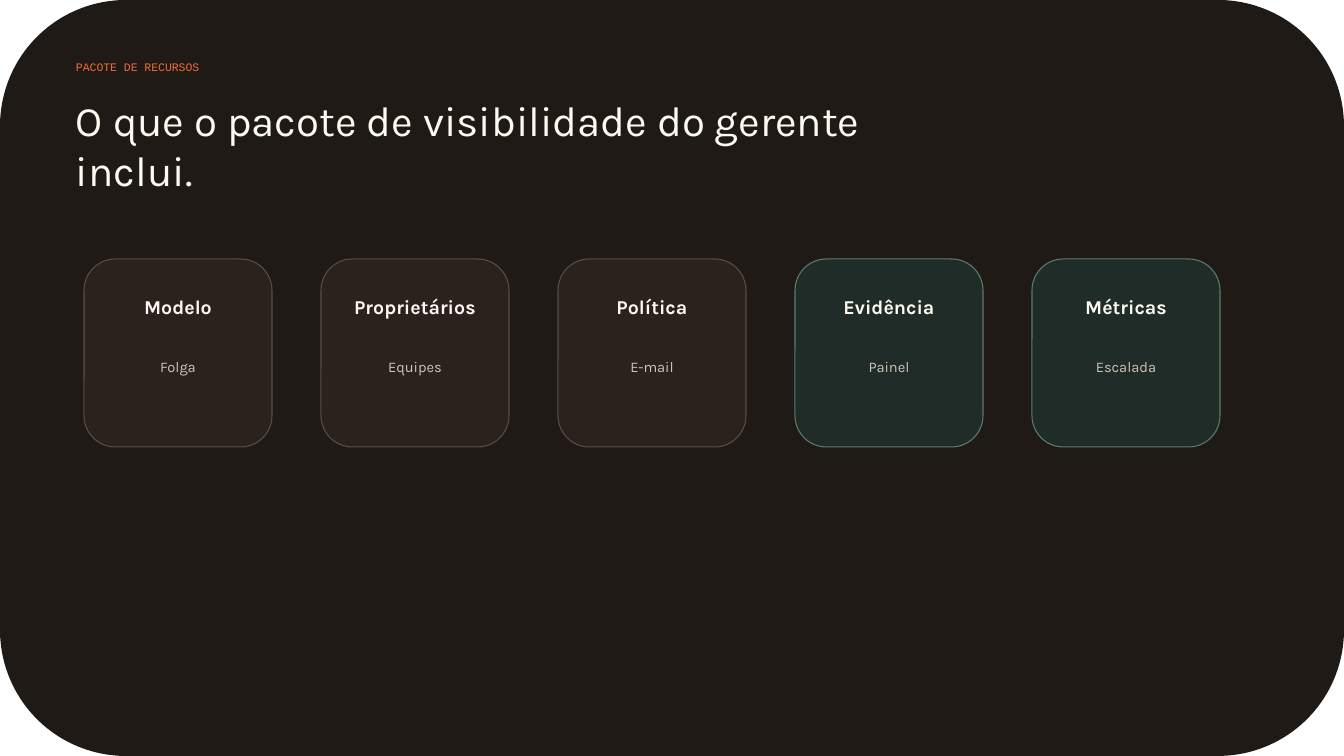
from pptx import Presentation
from pptx import util as u
from pptx.dml.color import RGBColor
from pptx.enum import shapes, text

PX = u.Inches(1) / 100.8
INK = RGBColor(0x20, 0x1A, 0x16)
CREAM = RGBColor(0xFF, 0xF9, 0xEF)
SAND = RGBColor(0xCF, 0xC4, 0xB8)
ORANGE = RGBColor(0xF2, 0x6B, 0x3A)
BROWN = (RGBColor(0x2A, 0x22, 0x1D), RGBColor(0x5B, 0x4D, 0x44))
GREEN = (RGBColor(0x1F, 0x2C, 0x27), RGBColor(0x5C, 0x7E, 0x6B))

EYEBROW = {"name": "Courier New", "size": u.Pt(8.2)}
HEADLINE = {"name": "Karla", "size": u.Pt(30)}
CARD_NAME = {"name": "Karla", "size": u.Pt(14), "bold": True}
CARD_DETAIL = {"name": "Karla", "size": u.Pt(10.5)}
FRAME = {
    "margin_left": 0, "margin_top": 0, "margin_right": 0, "margin_bottom": 0,
    "word_wrap": True,
    "auto_size": text.MSO_AUTO_SIZE.NONE,
    "vertical_anchor": text.MSO_ANCHOR.TOP,
}

CARDS = [
    ("Modelo", "Folga", BROWN),
    ("Proprietários", "Equipes", BROWN),
    ("Política", "E-mail", BROWN),
    ("Evidência", "Painel", GREEN),
    ("Métricas", "Escalada", GREEN),
]
CARD_LEFT, CARD_TOP, CARD_SIDE, CARD_STEP = 84, 259, 188, 237


def emu(*lengths):
    return [round(length * PX) for length in lengths]


def set_all(target, values):
    for key, value in values.items():
        setattr(target, key, value)


def write(box, words, font, color, align=text.PP_ALIGN.LEFT):
    set_all(box.text_frame, FRAME)
    para = box.text_frame.paragraphs[0]
    para.alignment = align
    span = para.add_run()
    span.text = words
    set_all(span.font, font)
    span.font.color.rgb = color


def add_label(page, place, *content):
    write(page.shapes.add_textbox(*emu(*place)), *content)


def add_title(page, place, *content):
    title = page.shapes.title
    set_all(title, dict(zip(("left", "top", "width", "height"), emu(*place))))
    write(title, *content)


def add_panel(page, place, fill, line=None):
    panel = page.shapes.add_shape(
        shapes.MSO_SHAPE.ROUNDED_RECTANGLE, *emu(*place))
    panel.shadow.inherit = False
    panel.fill.solid()
    panel.fill.fore_color.rgb = fill
    if line is None:
        panel.line.fill.background()
    else:
        panel.line.color.rgb = line
        panel.line.width = u.Pt(0.75)
    return panel


def add_card(page, left, name, detail, colors):
    center = text.PP_ALIGN.CENTER
    add_panel(page, (left, CARD_TOP, CARD_SIDE, CARD_SIDE), *colors)
    add_label(page, (left + 19, CARD_TOP + 36, 150, 33),
              name, CARD_NAME, CREAM, center)
    add_label(page, (left + 16, CARD_TOP + 99, 156, 57),
              detail, CARD_DETAIL, SAND, center)


def main():
    deck = Presentation()
    deck.slide_width, deck.slide_height = emu(1344, 756)
    page = deck.slides.add_slide(deck.slide_layouts[5])

    backdrop = add_panel(page, (0, 0, 1344, 756), INK).element
    page.shapes.title.element.addprevious(backdrop)

    add_label(page, (76, 60, 463, 28), "PACOTE DE RECURSOS", EYEBROW, ORANGE)
    add_title(page, (76, 94, 838, 72),
              "O que o pacote de visibilidade do gerente inclui.",
              HEADLINE, CREAM)
    for index, card in enumerate(CARDS):
        add_card(page, CARD_LEFT + index * CARD_STEP, *card)

    deck.save("out.pptx")


if __name__ == "__main__":
    main()
